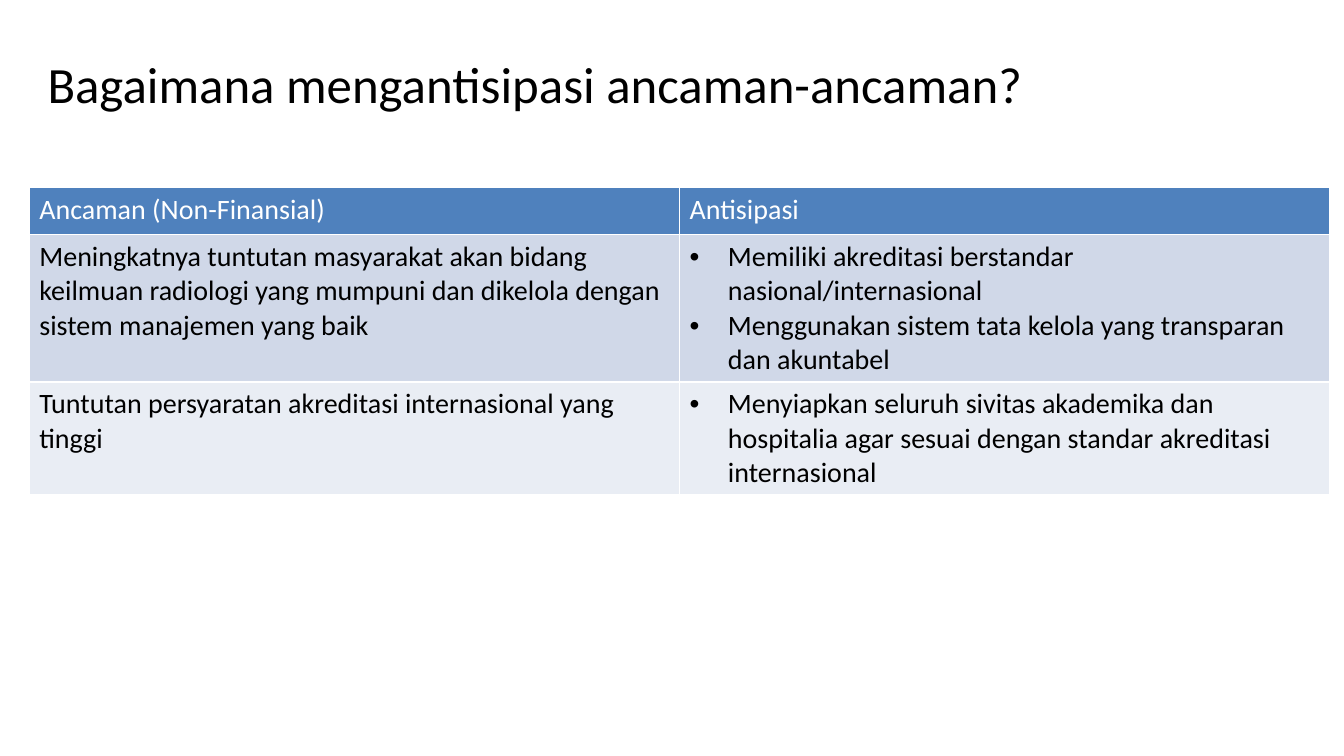
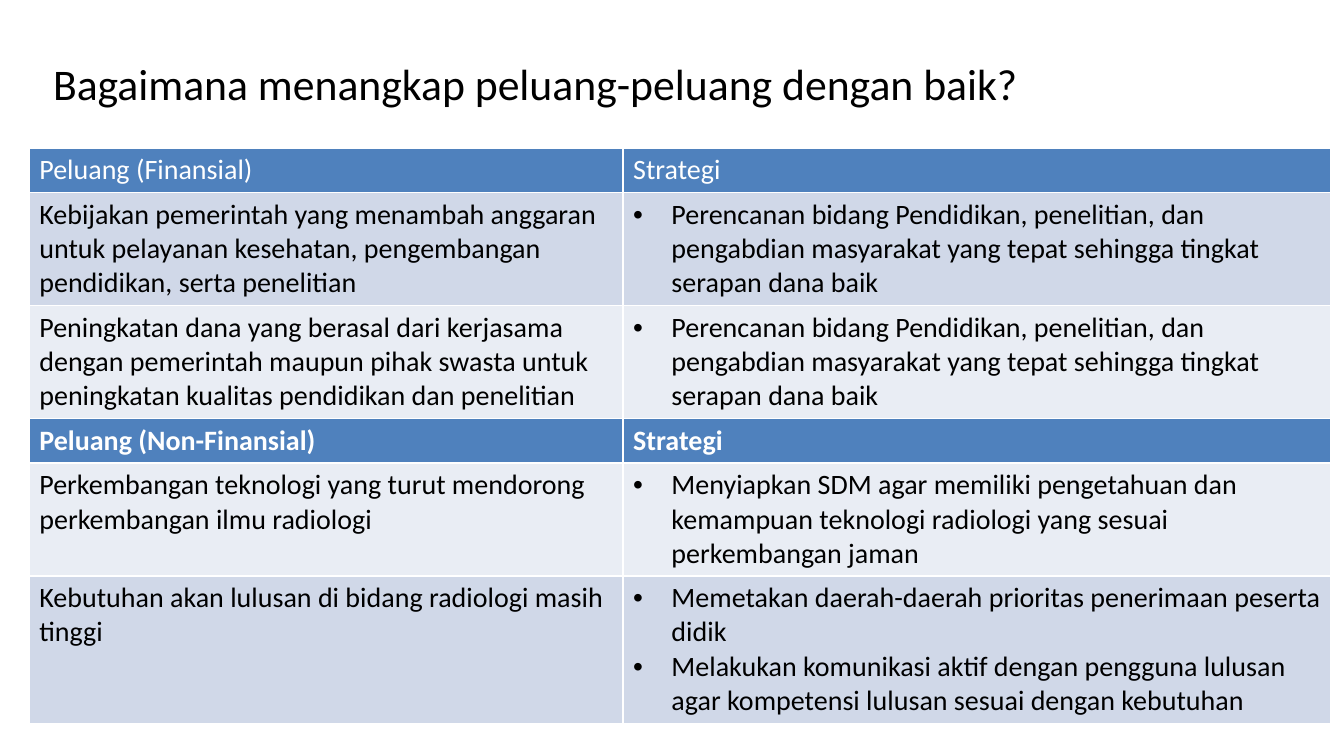
from dataclasses import dataclass

from pptx import Presentation
from pptx.dml.color import RGBColor
from pptx.enum.text import MSO_ANCHOR, MSO_AUTO_SIZE, PP_ALIGN
from pptx.oxml.ns import qn
from pptx.slide import SlideLayout
from pptx.table import _Cell as Cell
from pptx.text.text import _Paragraph as Para
from pptx.util import Inches, Pt
from lxml.etree import SubElement

BLUE = RGBColor(0x4F, 0x81, 0xBD)
DARK = RGBColor(0xD0, 0xD8, 0xE8)
LIGHT = RGBColor(0xE9, 0xED, 0xF4)
WHITE = RGBColor(0xFF, 0xFF, 0xFF)
BLACK = RGBColor(0x00, 0x00, 0x00)
FONT = "Calibri"
TITLE_ONLY = 5
LEFT = 0.29
INDENT = 0.38


@dataclass(frozen=True)
class Row:
    height: float
    left: str
    right: tuple[str, ...]
    head: bool = False
    bold: bool = False


@dataclass(frozen=True)
class Page:
    title: str
    size: float
    top: float
    widths: tuple[float, float]
    rows: tuple[Row, ...]


PLAN = ("Perencanan bidang Pendidikan, penelitian, dan pengabdian masyarakat "
        "yang tepat sehingga tingkat serapan dana baik")

PAGES = (
    Page("Bagaimana mengantisipasi ancaman-ancaman?", 36.3, 1.86, (6.45, 6.45), (
        Row(0.47, "Ancaman (Non-Finansial)", ("Antisipasi",), head=True),
        Row(1.46, "Meningkatnya tuntutan masyarakat akan bidang keilmuan radiologi "
                  "yang mumpuni dan dikelola dengan sistem manajemen yang baik",
            ("Memiliki akreditasi berstandar nasional/internasional",
             "Menggunakan sistem tata kelola yang transparan dan akuntabel")),
        Row(1.12, "Tuntutan persyaratan akreditasi internasional yang tinggi",
            ("Menyiapkan seluruh sivitas akademika dan hospitalia agar sesuai "
             "dengan standar akreditasi internasional",)),
    )),
    Page("Bagaimana menangkap peluang-peluang dengan baik?", 31.2, 1.47, (5.89, 7.02), (
        Row(0.44, "Peluang (Finansial)", ("Strategi",), head=True),
        Row(1.12, "Kebijakan pemerintah yang menambah anggaran untuk pelayanan "
                  "kesehatan, pengembangan pendidikan, serta penelitian", (PLAN,)),
        Row(1.12, "Peningkatan dana yang berasal dari kerjasama dengan pemerintah "
                  "maupun pihak swasta untuk peningkatan kualitas pendidikan dan "
                  "penelitian", (PLAN,)),
        Row(0.44, "Peluang (Non-Finansial)", ("Strategi",), head=True, bold=True),
        Row(1.12, "Perkembangan teknologi yang turut mendorong perkembangan ilmu "
                  "radiologi",
            ("Menyiapkan SDM agar memiliki pengetahuan dan kemampuan teknologi "
             "radiologi yang sesuai perkembangan jaman",)),
        Row(1.46, "Kebutuhan akan lulusan di bidang radiologi masih tinggi",
            ("Memetakan daerah-daerah prioritas penerimaan peserta didik",
             "Melakukan komunikasi aktif dengan pengguna lulusan agar kompetensi "
             "lulusan sesuai dengan kebutuhan")),
    )),
)


def add_run(para: Para, text: str, size: float, color: RGBColor, bold: bool = False) -> None:
    run = para.add_run()
    run.text = text
    font = run.font
    font.name, font.size, font.bold = FONT, Pt(size), bold
    font.color.rgb = color


def add_bullet(para: Para) -> None:
    props = para._p.get_or_add_pPr()
    props.set("marL", str(Inches(INDENT)))
    props.set("indent", str(-Inches(INDENT)))
    SubElement(props, qn("a:buFont")).set("typeface", "Arial")
    SubElement(props, qn("a:buChar")).set("char", "•")


def add_edges(cell: Cell) -> None:
    props = cell._tc.get_or_add_tcPr()
    for side in ("L", "R", "T", "B"):
        line = SubElement(props, qn(f"a:ln{side}"), w=str(Pt(1)))
        fill = SubElement(line, qn("a:solidFill"))
        SubElement(fill, qn("a:srgbClr"), val=str(WHITE))


def fill_cell(cell: Cell, row: Row, lines: tuple[str, ...], fill: RGBColor, listed: bool) -> None:
    add_edges(cell)
    cell.fill.solid()
    cell.fill.fore_color.rgb = fill
    cell.vertical_anchor = MSO_ANCHOR.MIDDLE if row.bold else MSO_ANCHOR.TOP
    frame = cell.text_frame
    for i, text in enumerate(lines):
        para = frame.add_paragraph() if i else frame.paragraphs[0]
        if listed:
            add_bullet(para)
        add_run(para, text, 20, WHITE if row.head else BLACK, row.bold)


def set_title(layout: SlideLayout) -> None:
    """Place the title once, for every slide on this layout."""
    title = layout.placeholders[0]
    title.left, title.top = Inches(0.18), Inches(0.31)
    title.width, title.height = Inches(10.26), Inches(1.03)
    frame = title.text_frame
    frame.auto_size = MSO_AUTO_SIZE.NONE
    frame.vertical_anchor = MSO_ANCHOR.MIDDLE


def add_page(deck: Presentation, layout: SlideLayout, page: Page) -> None:
    slide = deck.slides.add_slide(layout)
    para = slide.shapes.title.text_frame.paragraphs[0]
    para.alignment = PP_ALIGN.CENTER
    add_run(para, page.title, page.size, BLACK)

    table = slide.shapes.add_table(
        len(page.rows), len(page.widths), Inches(LEFT), Inches(page.top),
        Inches(sum(page.widths)), Inches(sum(row.height for row in page.rows))).table
    table.horz_banding = False
    for col, width in zip(table.columns, page.widths):
        col.width = Inches(width)
    for i, row in enumerate(page.rows):
        table.rows[i].height = Inches(row.height)
        fill = BLUE if row.head else DARK if i % 2 else LIGHT
        fill_cell(table.cell(i, 0), row, (row.left,), fill, False)
        fill_cell(table.cell(i, 1), row, row.right, fill, not row.head)


def main() -> None:
    deck = Presentation()
    deck.slide_width, deck.slide_height = Inches(13.33), Inches(7.5)
    layout = deck.slide_layouts[TITLE_ONLY]
    set_title(layout)
    for page in PAGES:
        add_page(deck, layout, page)
    deck.save("out.pptx")


if __name__ == "__main__":
    main()
